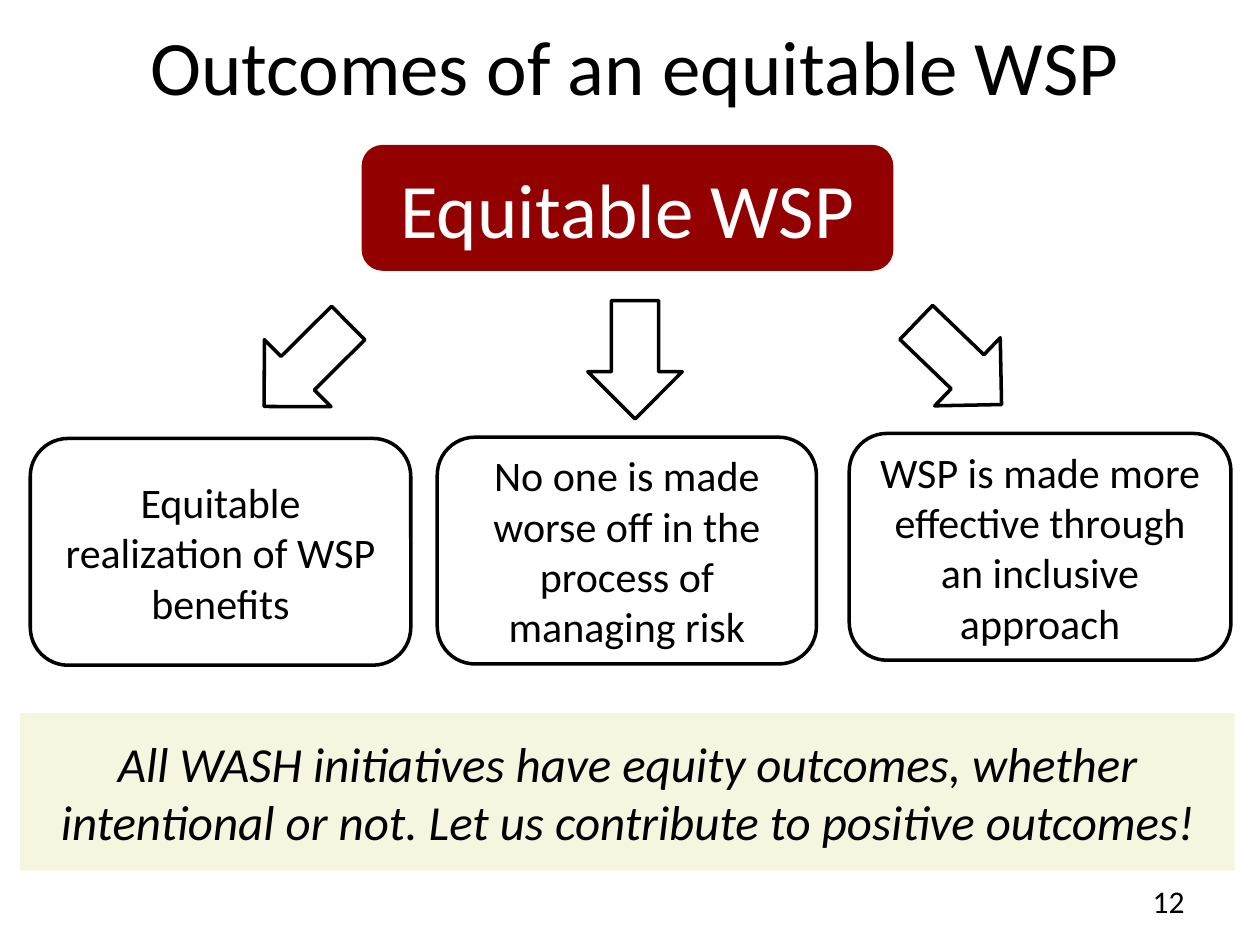
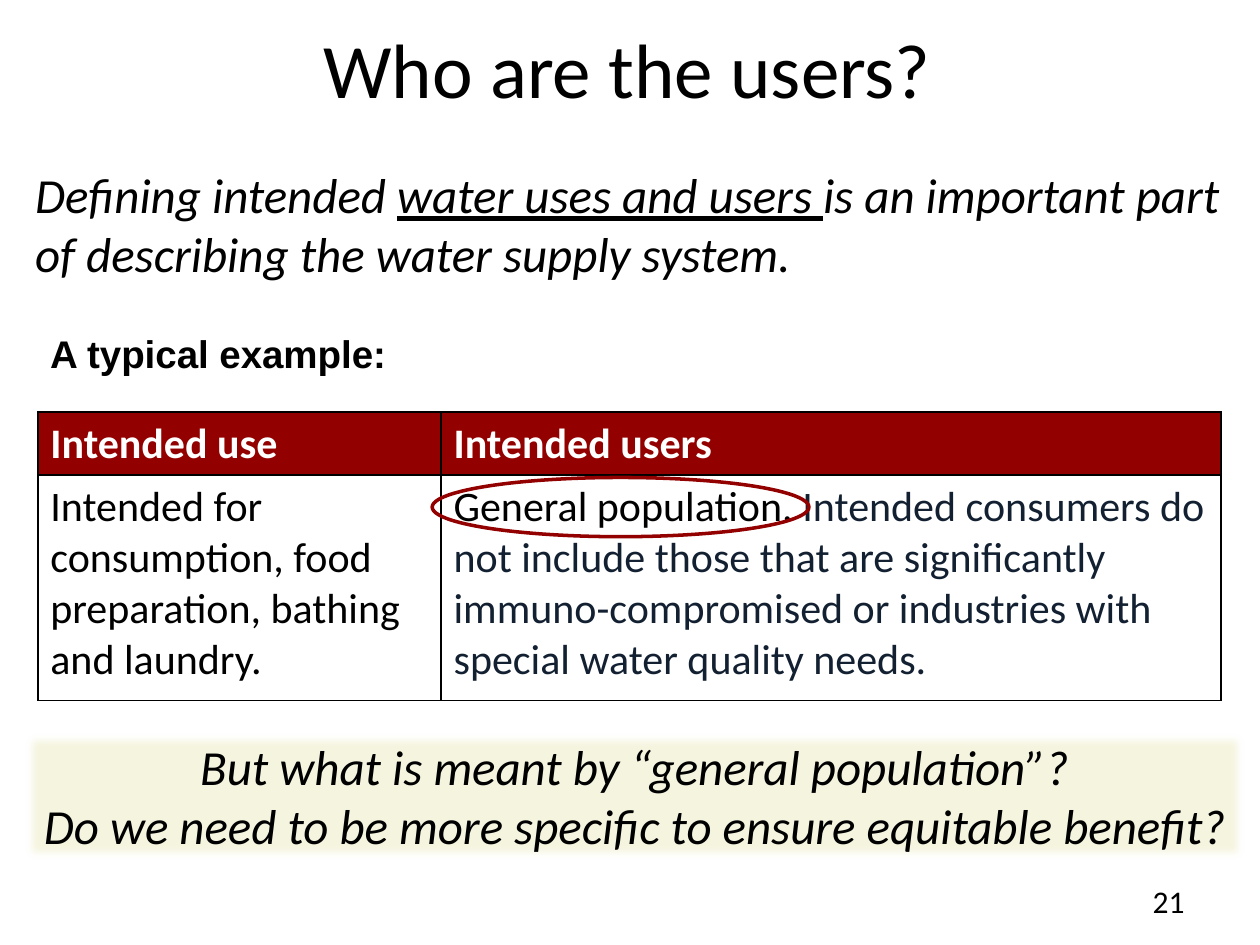
from dataclasses import dataclass, replace
from typing import NamedTuple, Optional

from lxml.etree import SubElement
from pptx import Presentation
from pptx.dml.color import RGBColor
from pptx.enum.shapes import MSO_SHAPE
from pptx.enum.text import MSO_ANCHOR, MSO_AUTO_SIZE, PP_ALIGN
from pptx.oxml.ns import qn
from pptx.util import Emu, Inches, Pt

WIDTH, HEIGHT = Inches(10), Inches(7.5)
COLORS = {
    "ink": "000000",
    "paper": "FFFFFF",
    "accent": "930000",
    "band": "EEECC2",
    "navy": "122031",
}


class Area(NamedTuple):
    """A rectangle in percent of the slide's width and height."""

    left: float
    top: float
    width: float
    height: float

    def emu(self) -> tuple:
        """Return the rectangle in slide units."""
        return (across(self.left), down(self.top), across(self.width), down(self.height))


class Piece(NamedTuple):
    """A stretch of text that departs from its paragraph's style."""

    text: str
    color: Optional[str] = None
    underline: Optional[bool] = None


class Outcome(NamedTuple):
    """An outcome with the arrow that leads to it."""

    text: str
    area: Area
    arrow: Area
    angle: float


@dataclass(frozen=True)
class Style:
    """The look of a block of text."""

    size: float
    color: str = "ink"
    bold: bool = False
    italic: bool = False
    font: str = "Calibri"
    align: PP_ALIGN = PP_ALIGN.LEFT
    anchor: MSO_ANCHOR = MSO_ANCHOR.MIDDLE


TITLE = Style(44, align=PP_ALIGN.CENTER, anchor=MSO_ANCHOR.TOP)
BANNER = Style(44, "paper", align=PP_ALIGN.CENTER)
CARD = Style(24, align=PP_ALIGN.CENTER)
CELL = Style(24, anchor=MSO_ANCHOR.TOP)
HEADER = replace(CELL, color="paper", bold=True)
STATEMENT = Style(28, italic=True)
MESSAGE = replace(STATEMENT, align=PP_ALIGN.CENTER)
CAPTION = Style(22, bold=True, font="Arial", anchor=MSO_ANCHOR.TOP)
NUMBER = Style(18, align=PP_ALIGN.RIGHT)

NUMBER_AREA = Area(71.7, 92.67, 23.3, 5.33)
CARD_HEIGHT = 24
ARROW_SIZE = (9.4, 10)

OUTCOMES = (
    Outcome("Equitable realization of WSP benefits",
            Area(2.4, 46.4, 30.2, CARD_HEIGHT), Area(19.6, 33.6, *ARROW_SIZE), 135.2),
    Outcome("No one is made worse off in the process of managing risk",
            Area(34.7, 46.27, 30.1, CARD_HEIGHT), Area(45.7, 33.07, *ARROW_SIZE), 90),
    Outcome("WSP is made more effective through an inclusive approach",
            Area(67.4, 45.87, 30.3, CARD_HEIGHT), Area(71.4, 33.47, *ARROW_SIZE), 43.9),
)

USE_COLUMNS = (32, 61.9)
USE_ROWS = (6.27, 23.87)
USES = (
    ((Piece("Intended use"),), (Piece("Intended users"),)),
    (
        (Piece("Intended for consumption, food preparation, bathing and laundry."),),
        (
            Piece("General population. "),
            Piece("Intended consumers do not include those that are significantly "
                  "immuno-compromised or industries with special water quality needs.", "navy"),
        ),
    ),
)


def across(percent: float) -> Emu:
    """Convert a share of the slide's width."""
    return Emu(round(WIDTH * percent / 100))


def down(percent: float) -> Emu:
    """Convert a share of the slide's height."""
    return Emu(round(HEIGHT * percent / 100))


def rgb(color: str) -> RGBColor:
    """Look up a named colour."""
    return RGBColor.from_string(COLORS[color])


def write(frame, style: Style, *paragraphs: tuple) -> None:
    """Fill a text frame with paragraphs made of pieces."""
    frame.word_wrap = True
    for index, pieces in enumerate(paragraphs):
        paragraph = frame.add_paragraph() if index else frame.paragraphs[0]
        paragraph.alignment = style.align
        font = paragraph.font
        font.name, font.size = style.font, Pt(style.size)
        font.bold, font.italic = style.bold, style.italic
        font.color.rgb = rgb(style.color)
        for piece in pieces:
            run = paragraph.add_run()
            run.text = piece.text
            if piece.color:
                run.font.color.rgb = rgb(piece.color)
            if piece.underline:
                run.font.underline = True


def add_text(slide, area: Area, style: Style, *pieces: Piece) -> None:
    """Add a one-paragraph text box."""
    frame = slide.shapes.add_textbox(*area.emu()).text_frame
    frame.vertical_anchor = style.anchor
    write(frame, style, pieces)


def add_figure(slide, kind: MSO_SHAPE, area: Area, fill: Optional[str] = None,
               line: Optional[str] = None, angle: float = 0):
    """Add a preset shape with a plain fill or outline."""
    figure = slide.shapes.add_shape(kind, *area.emu())
    figure.shadow.inherit = False
    figure.rotation = angle
    if fill:
        figure.fill.solid()
        figure.fill.fore_color.rgb = rgb(fill)
    else:
        figure.fill.background()
    if line:
        figure.line.color.rgb = rgb(line)
        figure.line.width = Pt(2)
    else:
        figure.line.fill.background()
    return figure


def add_label(figure, style: Style, *lines: str) -> None:
    """Write lines of text inside a shape."""
    figure.text_frame.vertical_anchor = style.anchor
    write(figure.text_frame, style, *((Piece(line),) for line in lines))


def add_message(slide, area: Area, style: Style, *lines: str, soft: bool = False) -> None:
    """Add the translucent closing band."""
    band = add_figure(slide, MSO_SHAPE.RECTANGLE, area, fill="band")
    properties = band.element.spPr
    tint = properties.find(qn("a:solidFill")).find(qn("a:srgbClr"))
    SubElement(tint, qn("a:alpha")).set("val", "51000")
    if soft:
        SubElement(properties.find(qn("a:effectLst")), qn("a:softEdge")).set("rad", "63500")
    add_label(band, style, *lines)


def add_borders(cell) -> None:
    """Draw thin lines on the four sides of a cell."""
    properties = cell._tc.get_or_add_tcPr()
    for side in ("L", "R", "T", "B"):
        border = SubElement(properties, qn(f"a:ln{side}"))
        border.set("w", str(Pt(1)))
        SubElement(SubElement(border, qn("a:solidFill")), qn("a:srgbClr")).set("val", COLORS["ink"])


def add_uses(slide) -> None:
    """Add the table of intended uses and users."""
    area = Area(3, 43.6, sum(USE_COLUMNS), sum(USE_ROWS))
    table = slide.shapes.add_table(len(USES), len(USE_COLUMNS), *area.emu()).table
    table.first_row = table.horz_banding = False
    for column, width in zip(table.columns, USE_COLUMNS):
        column.width = across(width)
    for row, height in zip(table.rows, USE_ROWS):
        row.height = down(height)
    for row, entries in enumerate(USES):
        fill, style = ("paper", CELL) if row else ("accent", HEADER)
        for column, pieces in enumerate(entries):
            cell = table.cell(row, column)
            add_borders(cell)
            cell.fill.solid()
            cell.fill.fore_color.rgb = rgb(fill)
            write(cell.text_frame, style, pieces)


def start_slide(deck, heading: str, area: Area, number: int):
    """Add a slide with its title and page number."""
    slide = deck.slides.add_slide(deck.slide_layouts[5])
    title = slide.shapes.title
    title.left, title.top, title.width, title.height = area.emu()
    title.text_frame.auto_size = MSO_AUTO_SIZE.NONE
    title.text_frame.vertical_anchor = TITLE.anchor
    write(title.text_frame, TITLE, (Piece(heading),))
    add_text(slide, NUMBER_AREA, NUMBER, Piece(str(number)))
    return slide


def build_outcomes(deck) -> None:
    """Build the slide on the outcomes of an equitable plan."""
    slide = start_slide(deck, "Outcomes of an equitable WSP", Area(-0.8, 1.33, 102.4, 12), 12)
    for outcome in OUTCOMES:
        card = add_figure(slide, MSO_SHAPE.ROUNDED_RECTANGLE, outcome.area, line="ink")
        add_label(card, CARD, outcome.text)
        add_figure(slide, MSO_SHAPE.RIGHT_ARROW, outcome.arrow, line="ink", angle=outcome.angle)
    banner = add_figure(slide, MSO_SHAPE.ROUNDED_RECTANGLE, Area(28.7, 15.33, 42.2, 13.33), fill="accent")
    add_label(banner, BANNER, "Equitable WSP")
    add_message(slide, Area(1.6, 75.47, 96.4, 16.67), MESSAGE,
                "All WASH initiatives have equity outcomes, whether intentional or not. "
                "Let us contribute to positive outcomes!")


def build_users(deck) -> None:
    """Build the slide on who the users are."""
    slide = start_slide(deck, "Who are the users?", Area(-1.4, 1.6, 102.4, 12), 21)
    add_uses(slide)
    add_text(slide, Area(3, 34.27, 87.4, 6.27), CAPTION, Piece("A typical example:"))
    add_message(slide, Area(1.8, 77.33, 97.1, 13.87), replace(MESSAGE, anchor=MSO_ANCHOR.TOP),
                "But what is meant by “general population”?",
                "Do we need to be more specific to ensure equitable benefit?", soft=True)
    add_figure(slide, MSO_SHAPE.OVAL, Area(34.3, 50.53, 29.9, 6.27), line="accent")
    add_text(slide, Area(1.8, 15.33, 98.2, 16.67), STATEMENT,
             Piece("Defining intended "),
             Piece("water uses and users ", underline=True),
             Piece("is an important part of describing the water supply system."))


def main() -> None:
    """Build the deck and save it."""
    deck = Presentation()
    deck.slide_width, deck.slide_height = WIDTH, HEIGHT
    build_outcomes(deck)
    build_users(deck)
    deck.save("out.pptx")


if __name__ == "__main__":
    main()
